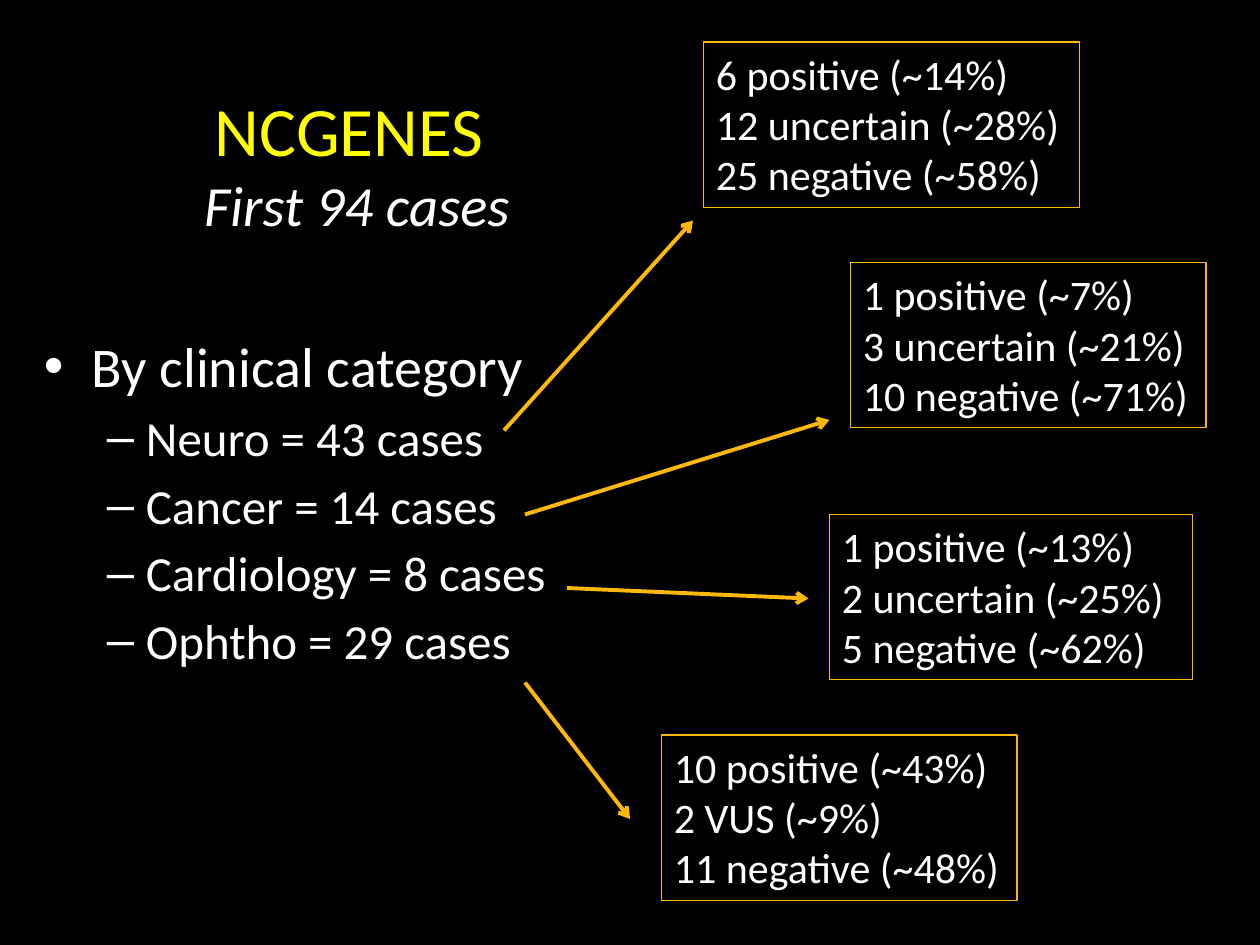
from pptx import Presentation
from pptx.dml.color import RGBColor
from pptx.enum.shapes import MSO_CONNECTOR as Conn
from pptx.enum.text import MSO_ANCHOR as Anchor, MSO_AUTO_SIZE as Fit, PP_ALIGN as Align
from pptx.oxml.ns import qn
from pptx.util import Inches, Pt
from lxml.etree import SubElement as Sub

COLS, ROWS = 120, 90


def tint(code):
    return RGBColor.from_string(code)


def write(para, text, size=24, color="FFFFFF", font="Calibri", italic=False):
    run = para.add_run()
    run.text = text
    run.font.name, run.font.size = font, Pt(size)
    run.font.color.rgb, run.font.italic = tint(color), italic


def paras(frame, count):
    """Return the first paragraph of a frame plus as many new ones as needed."""
    return [frame.paragraphs[0]] + [frame.add_paragraph() for _ in range(count - 1)]


class Deck:
    gold, yellow, black = "FEB80A", "FFFF00", "000000"

    def __init__(self):
        self.prs = Presentation()
        self.prs.slide_width, self.prs.slide_height = Inches(10), Inches(7.5)
        self.slide = self.prs.slides.add_slide(self.prs.slide_layouts[5])
        fill = self.slide.background.fill
        fill.solid()
        fill.fore_color.rgb = tint(self.black)

    def grid(self, *cells):
        """Turn column, row, column, row ... into slide lengths."""
        steps = (self.prs.slide_width / COLS, self.prs.slide_height / ROWS)
        return [round(cell * steps[i % 2]) for i, cell in enumerate(cells)]

    def title(self, head, sub, *area):
        box = self.slide.shapes.title
        box.left, box.top, box.width, box.height = self.grid(*area)
        box.text_frame.vertical_anchor = Anchor.MIDDLE
        para = box.text_frame.paragraphs[0]
        para.alignment = Align.CENTER
        write(para, head, size=39.6, color=self.yellow)
        para.add_line_break()
        write(para, sub, size=32.4, italic=True)

    def list(self, items, *area):
        frame = self.slide.shapes.add_textbox(*self.grid(*area)).text_frame
        frame.word_wrap = True
        looks = [("•", 32, 0.38, 0.38, 6), ("–", 28, 0.81, 0.31, 5)]
        for para, (level, text) in zip(paras(frame, len(items)), items):
            mark, size, left, hang, gap = looks[level]
            para.level, para.space_before = level, Pt(gap)
            props = para._p.get_or_add_pPr()
            props.set("marL", str(Inches(left)))
            props.set("indent", str(-Inches(hang)))
            Sub(props, qn("a:buFont"), typeface="Arial")
            Sub(props, qn("a:buChar"), char=mark)
            write(para, text, size=size)

    def box(self, home, lines, *area):
        shape = home.shapes.add_textbox(*self.grid(*area))
        shape.line.color.rgb, shape.line.width = tint(self.gold), Pt(0.75)
        frame = shape.text_frame
        frame.word_wrap, frame.auto_size = False, Fit.SHAPE_TO_FIT_TEXT
        for para, text in zip(paras(frame, len(lines)), lines):
            write(para, text)

    def arrow(self, home, *ends):
        line = home.shapes.add_connector(Conn.STRAIGHT, *self.grid(*ends))
        line.line.color.rgb, line.line.width = tint(self.gold), Pt(2.25)
        Sub(line.line._get_or_add_ln(), qn("a:tailEnd"), type="arrow")
        Sub(line._element.spPr, qn("a:effectLst"))

    def result(self, lines, area, ends):
        """Group a result box with the arrow that leads to it."""
        home = self.slide.shapes.add_group_shape()
        self.box(home, lines, *area)
        self.arrow(home, *ends)


def main():
    deck = Deck()

    # Heading and case counts
    deck.title("NCGENES ", "First 94 cases", 2, 8, 64, 15)
    deck.list([
        (0, "By clinical category"),
        (1, "Neuro = 43 cases"),
        (1, "Cancer = 14 cases"),
        (1, "Cardiology = 8 cases"),
        (1, "Ophtho = 29 cases"),
    ], 3, 31, 57, 54)

    # Results: lines, box area, arrow ends
    high = 15.75
    results = [
        (["6 positive (~14%)", "12 uncertain (~28%)", "25 negative (~58%)"],
         (67, 4, 35.85, high), (48, 41, 66, 21)),
        (["1 positive (~7%)", "3 uncertain (~21%)", "10 negative (~71%)"],
         (81, 25, 33.85, high), (50, 49, 79, 40)),
        (["1 positive (~13%)", "2 uncertain (~25%)", "5 negative (~62%)"],
         (79, 49, 34.6, high), (54, 56, 77, 57)),
        (["10 positive (~43%)", "2 VUS (~9%)", "11 negative (~48%)"],
         (63, 70, 33.85, high), (50, 65, 60, 78)),
    ]
    for lines, area, ends in results:
        deck.result(lines, area, ends)

    deck.prs.save("out.pptx")


if __name__ == "__main__":
    main()
